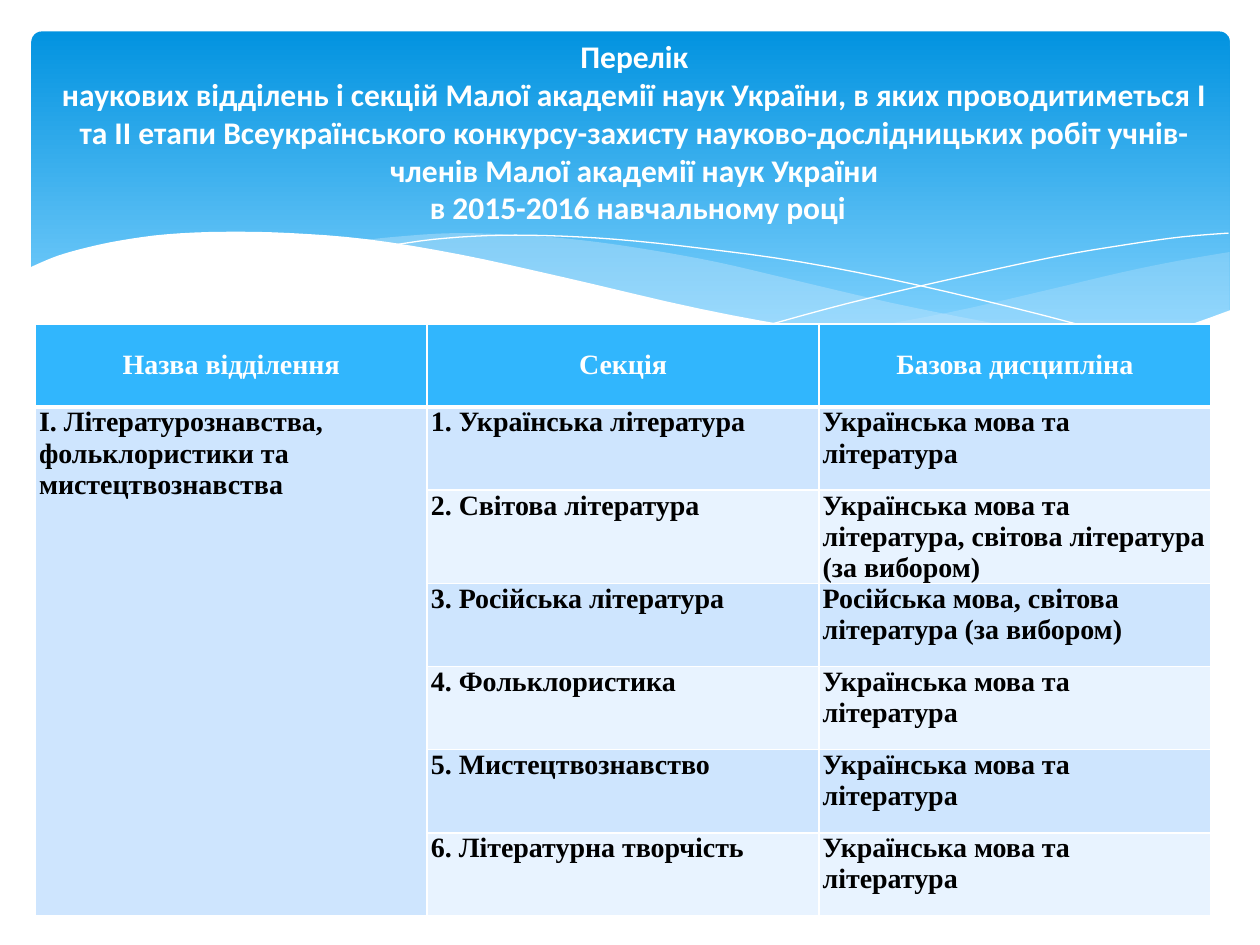
from lxml import etree
from pptx import Presentation
from pptx.dml.color import RGBColor
from pptx.enum.shapes import MSO_SHAPE
from pptx.enum.text import MSO_ANCHOR, PP_ALIGN
from pptx.oxml.ns import qn
from pptx.util import Pt

PX = 9144
CENTER, LEFT = PP_ALIGN.CENTER, PP_ALIGN.LEFT
MIDDLE, TOP = MSO_ANCHOR.MIDDLE, MSO_ANCHOR.TOP
ROUNDED = MSO_SHAPE.ROUNDED_RECTANGLE

TITLE = (
    "Перелік\v"
    "наукових відділень і секцій Малої академії наук України, в яких проводитиметься I "
    "та II етапи Всеукраїнського конкурсу-захисту науково-дослідницьких робіт "
    "учнів-членів Малої академії наук України\v"
    " в 2015-2016 навчальному році"
)
HEADINGS = ("Назва відділення", "Секція", "Базова дисципліна")
DEPARTMENT = "І. Літературознавства, фольклористики та мистецтвознавства"
UKRAINIAN = "Українська мова та література"
SECTIONS = [
    ("1. Українська література", UKRAINIAN),
    ("2. Світова література", UKRAINIAN + ", світова література (за вибором)"),
    ("3. Російська література", "Російська мова, світова література (за вибором)"),
    ("4. Фольклористика", UKRAINIAN),
    ("5. Мистецтвознавство", UKRAINIAN),
    ("6. Літературна творчість", UKRAINIAN),
]

TITLE_FONT = {"name": "Calibri", "size": Pt(18), "bold": True}
TABLE_FONT = {"name": "Times New Roman", "size": Pt(16), "bold": True}
TABLE_BOX = (28, 257, 933, 462)
BANNER_BOX = (25, 25, 951, 270)
BANNER_STOPS = [(0, "0293E0"), (0.9, "83D3FE")]
BANDS = ("CEE5FE", "E8F3FF")

WAVES = [
    {
        "fill": "C6E7FC", "alpha": 29,
        "curves": [
            [(976, 200), (935, 207), (891, 216), (832, 230), (753, 248), (661, 265)],
            [(661, 265), (719, 271), (769, 277), (814, 278), (854, 276),
             (897, 270), (935, 262), (963, 252), (976, 247)],
        ],
    },
    {
        "fill": "C6E7FC", "alpha": 40,
        "curves": [
            [(893, 273), (837, 265), (775, 254), (706, 240), (629, 222), (569, 208),
             (514, 198), (465, 191), (420, 187), (361, 185), (313, 188), (286, 191)],
            [(286, 191), (342, 199), (404, 211), (491, 232), (566, 248), (634, 261),
             (695, 270), (748, 276), (796, 278), (848, 277), (893, 273)],
        ],
    },
    {
        "line": "FFFFFF",
        "curves": [[(309, 195), (344, 190), (387, 187), (433, 187), (489, 190), (556, 197),
                    (636, 208), (727, 226), (831, 251), (907, 272)]],
    },
    {
        "line": "FFFFFF",
        "curves": [[(613, 257), (672, 241), (748, 223), (836, 204), (895, 194), (938, 188),
                    (975, 185)]],
    },
    {
        "fill": "FFFFFF",
        "curves": [
            [(977, 246), (940, 259), (899, 269), (850, 275), (793, 276), (726, 272),
             (648, 262), (555, 245), (447, 220), (365, 202), (292, 190), (230, 185),
             (177, 184), (132, 186), (95, 191), (67, 197), (46, 203), (29, 210), (23, 213)],
            [(23, 329), (977, 329)],
        ],
    },
]


def paint(color):
    """Turn a hex string into a colour."""
    return RGBColor.from_string(color)


def smooth(knots, steps=4):
    """Return points on a Catmull-Rom curve through the knots."""
    if len(knots) < 3:
        return knots
    padded = [knots[0], *knots, knots[-1]]
    points = []
    for a, b, c, d in zip(padded, padded[1:], padded[2:], padded[3:]):
        for step in range(steps):
            t = step / steps
            points.append(tuple(
                q + t * (r - p + t * (2 * p - 5 * q + 4 * r - s + t * (3 * q - p - 3 * r + s))) / 2
                for p, q, r, s in zip(a, b, c, d)
            ))
    return points + [knots[-1]]


def draw_banner(page):
    """Add the rounded blue banner with its gradient."""
    banner = page.shapes.add_shape(ROUNDED, *(PX * v for v in BANNER_BOX))
    banner.adjustments[0] = 0.03
    banner.shadow.inherit = False
    banner.line.fill.background()
    banner.fill.gradient()
    banner.fill.gradient_angle = 270
    for stop, (position, color) in zip(banner.fill.gradient_stops, BANNER_STOPS):
        stop.position = position
        stop.color.rgb = paint(color)


def draw_wave(page, wave):
    """Add one filled wave or one thin wave line."""
    points = [(round(x * PX), round(y * PX))
              for curve in wave["curves"] for x, y in smooth(curve)]
    builder = page.shapes.build_freeform(*points[0], scale=1)
    builder.add_line_segments(points[1:], close="fill" in wave)
    shape = builder.convert_to_shape()
    shape.shadow.inherit = False
    if "line" in wave:
        shape.fill.background()
        shape.line.color.rgb = paint(wave["line"])
        shape.line.width = Pt(0)
        return
    shape.line.fill.background()
    shape.fill.solid()
    shape.fill.fore_color.rgb = paint(wave["fill"])
    if "alpha" in wave:
        color = shape.element.spPr.find(qn("a:solidFill"))[0]
        etree.SubElement(color, qn("a:alpha"), val=str(wave["alpha"] * 1000))


def write(frame, text, font, color, align):
    """Put formatted text in a frame."""
    frame.text = text
    para = frame.paragraphs[0]
    para.alignment = align
    for span in para.runs:
        for key, value in font.items():
            setattr(span.font, key, value)
        span.font.color.rgb = paint(color)


def style_cell(cell, fill, bottom):
    """Set the borders, insets and fill of a cell."""
    properties = cell._tc.get_or_add_tcPr()
    for side, width in (("L", 1), ("R", 1), ("T", 1), ("B", bottom)):
        border = etree.SubElement(properties, qn(f"a:ln{side}"), w=str(Pt(width)))
        solid = etree.SubElement(border, qn("a:solidFill"))
        etree.SubElement(solid, qn("a:srgbClr"), val="FFFFFF")
    for key, value in {"left": 3, "right": 3, "top": 0, "bottom": 0}.items():
        setattr(cell, f"margin_{key}", value * PX)
    cell.fill.solid()
    cell.fill.fore_color.rgb = paint(fill)


def draw_table(page):
    """Add the table of sections and their disciplines."""
    rows = [HEADINGS] + [("" if i else DEPARTMENT, *row) for i, row in enumerate(SECTIONS)]
    frame = page.shapes.add_table(len(rows), len(HEADINGS), *(PX * v for v in TABLE_BOX))
    table = frame.table
    for i, row in enumerate(rows):
        for j, text in enumerate(row):
            cell = table.cell(i, j)
            header = i == 0
            band = BANDS[0] if j == 0 else BANDS[(i - 1) % 2]
            style_cell(cell, "31B6FD" if header else band, 3 if header else 1)
            cell.vertical_anchor = MIDDLE if header else TOP
            if text:
                write(cell.text_frame, text, TABLE_FONT,
                      "FFFFFF" if header else "000000", CENTER if header else LEFT)
    table.cell(1, 0).merge(table.cell(len(SECTIONS), 0))


def draw_title(page):
    """Add the title over the banner."""
    box = page.shapes.add_textbox(*(PX * v for v in (35, 37, 937, 165)))
    frame = box.text_frame
    settings = {"word_wrap": True, "vertical_anchor": MIDDLE, "margin_left": 10 * PX,
                "margin_right": 10 * PX, "margin_top": 5 * PX, "margin_bottom": 35 * PX}
    for key, value in settings.items():
        setattr(frame, key, value)
    write(frame, TITLE, TITLE_FONT, "FFFFFF", CENTER)


def main():
    """Build and save the slide."""
    deck = Presentation()
    deck.slide_width, deck.slide_height = 1000 * PX, 750 * PX
    page = deck.slides.add_slide(deck.slide_layouts[6])
    draw_banner(page)
    for wave in WAVES:
        draw_wave(page, wave)
    draw_table(page)
    draw_title(page)
    deck.save("out.pptx")


if __name__ == "__main__":
    main()
